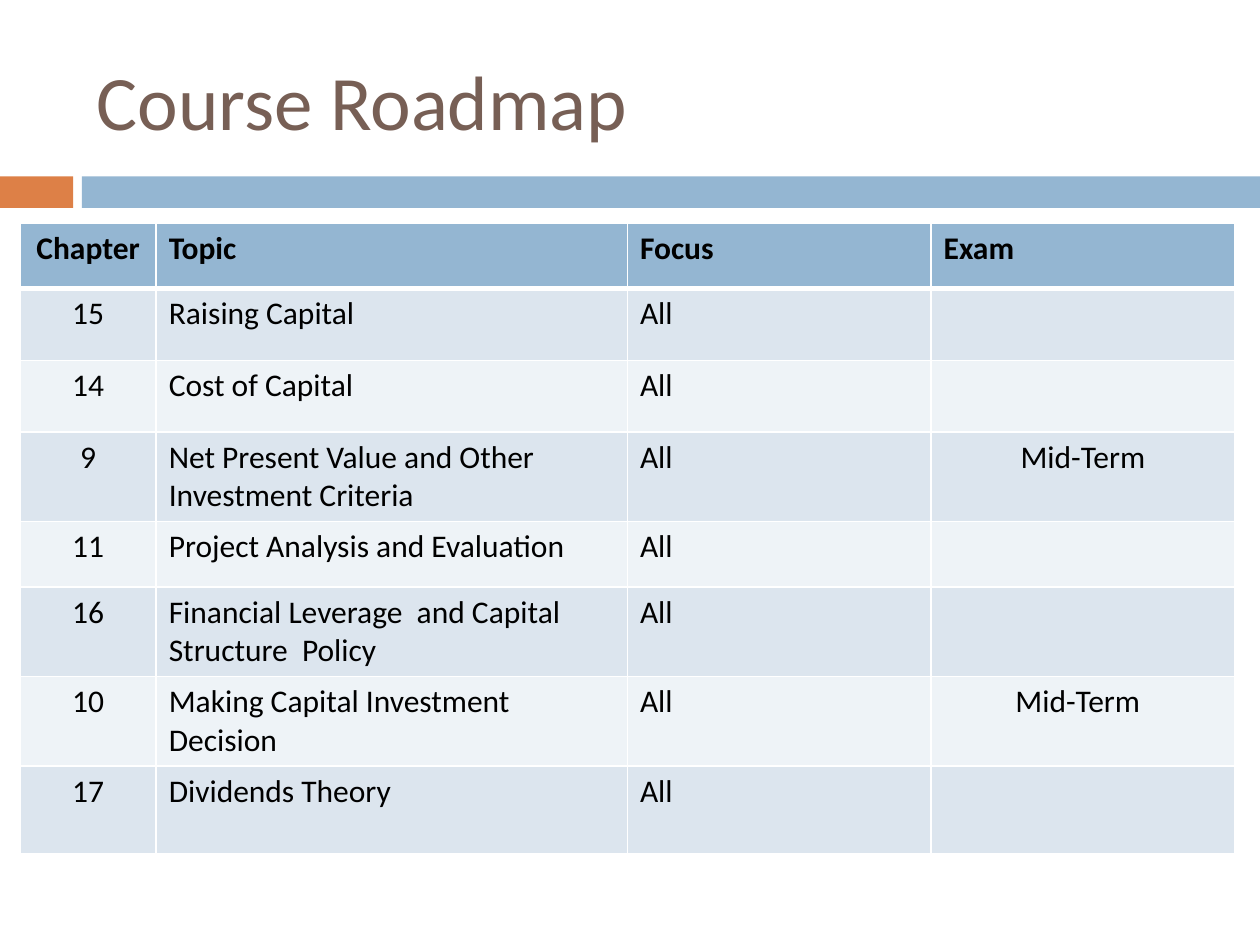
from dataclasses import dataclass

from lxml import etree
from pptx import Presentation
from pptx.dml.color import RGBColor
from pptx.enum.shapes import MSO_SHAPE
from pptx.enum.text import MSO_ANCHOR, PP_ALIGN
from pptx.oxml.ns import qn
from pptx.util import Inches, Pt


@dataclass(frozen=True)
class Theme:
    font: str = "Calibri"
    title_size: int = 44
    table_size: int = 18
    title: str = "775F55"
    text: str = "000000"
    accent: str = "DD8047"
    band: str = "94B6D2"
    odd_row: str = "DCE5EE"
    even_row: str = "EEF3F7"
    grid: str = "FFFFFF"


THEME = Theme()
TITLE = "Course Roadmap"
HEADER = ("Chapter", "Topic", "Focus", "Exam")
CHAPTERS = [
    ("15", "Raising Capital", "All", ""),
    ("14", "Cost of Capital", "All", ""),
    ("9", "Net Present Value and Other Investment Criteria", "All", "Mid-Term"),
    ("11", "Project Analysis and Evaluation", "All", ""),
    ("16", "Financial Leverage  and Capital Structure  Policy", "All", ""),
    ("10", "Making Capital Investment Decision", "All", "Mid-Term"),
    ("17", "Dividends Theory", "All", ""),
]
COLUMN_WIDTHS = (1.08, 3.74, 2.41, 2.41)
ROW_HEIGHTS = (0.52, 0.57, 0.57, 0.71, 0.52, 0.71, 0.71, 0.7)
TABLE_LEFT, TABLE_TOP = 0.16, 1.77
CENTERED_EXAM, INDENTED_EXAM = (3, 3), (6, 3)
BARS = [(0, 0.58, THEME.accent), (0.65, 9.35, THEME.band)]
BAR_TOP, BAR_HEIGHT = 1.4, 0.25


def write(paragraph, text, size, color, bold=False):
    run = paragraph.add_run()
    run.text = text
    for name, value in {"name": THEME.font, "size": Pt(size), "bold": bold}.items():
        setattr(run.font, name, value)
    run.font.color.rgb = RGBColor.from_string(color)


def set_borders(cell, bottom_width):
    """Draw the four cell edges; they must come before the fill in tcPr."""
    properties = cell._tc.get_or_add_tcPr()
    widths = {"a:lnL": 1, "a:lnR": 1, "a:lnT": 1, "a:lnB": bottom_width}
    for position, (tag, width) in enumerate(widths.items()):
        line = etree.Element(qn(tag), w=str(Pt(width)))
        fill = etree.SubElement(line, qn("a:solidFill"))
        etree.SubElement(fill, qn("a:srgbClr"), val=THEME.grid)
        properties.insert(position, line)


def add_bars(slide):
    for left, width, color in BARS:
        bar = slide.shapes.add_shape(
            MSO_SHAPE.RECTANGLE, Inches(left), Inches(BAR_TOP), Inches(width), Inches(BAR_HEIGHT)
        )
        bar.shadow.inherit = False
        bar.fill.solid()
        bar.fill.fore_color.rgb = RGBColor.from_string(color)
        bar.line.fill.background()


def add_title(slide):
    title = slide.shapes.add_textbox(Inches(0.67), Inches(0.25), Inches(8.92), Inches(1.08))
    frame = title.text_frame
    frame.word_wrap = True
    frame.vertical_anchor = MSO_ANCHOR.MIDDLE
    write(frame.paragraphs[0], TITLE, THEME.title_size, THEME.title)


def add_roadmap(slide):
    rows = [HEADER, *CHAPTERS]
    roadmap = slide.shapes.add_table(
        len(rows), len(HEADER), Inches(TABLE_LEFT), Inches(TABLE_TOP),
        Inches(sum(COLUMN_WIDTHS)), Inches(sum(ROW_HEIGHTS)),
    ).table
    for column, width in zip(roadmap.columns, COLUMN_WIDTHS):
        column.width = Inches(width)
    for r, (texts, height) in enumerate(zip(rows, ROW_HEIGHTS)):
        roadmap.rows[r].height = Inches(height)
        is_header = r == 0
        color = THEME.band if is_header else THEME.odd_row if r % 2 else THEME.even_row
        for c, text in enumerate(texts):
            cell = roadmap.cell(r, c)
            cell.fill.solid()
            cell.fill.fore_color.rgb = RGBColor.from_string(color)
            # The header rule is shared by the bottom of row 0 only.
            set_borders(cell, 3 if is_header else 1)
            paragraph = cell.text_frame.paragraphs[0]
            if c == 0 or (r, c) == CENTERED_EXAM:
                paragraph.alignment = PP_ALIGN.CENTER
            if (r, c) == INDENTED_EXAM:
                cell.margin_left = Inches(0.67)
            if text:
                write(paragraph, text, THEME.table_size, THEME.text, is_header)


def main():
    presentation = Presentation()
    presentation.slide_width, presentation.slide_height = Inches(10), Inches(7.5)
    slide = presentation.slides.add_slide(presentation.slide_layouts[6])
    add_bars(slide)
    add_title(slide)
    add_roadmap(slide)
    presentation.save("out.pptx")


if __name__ == "__main__":
    main()
